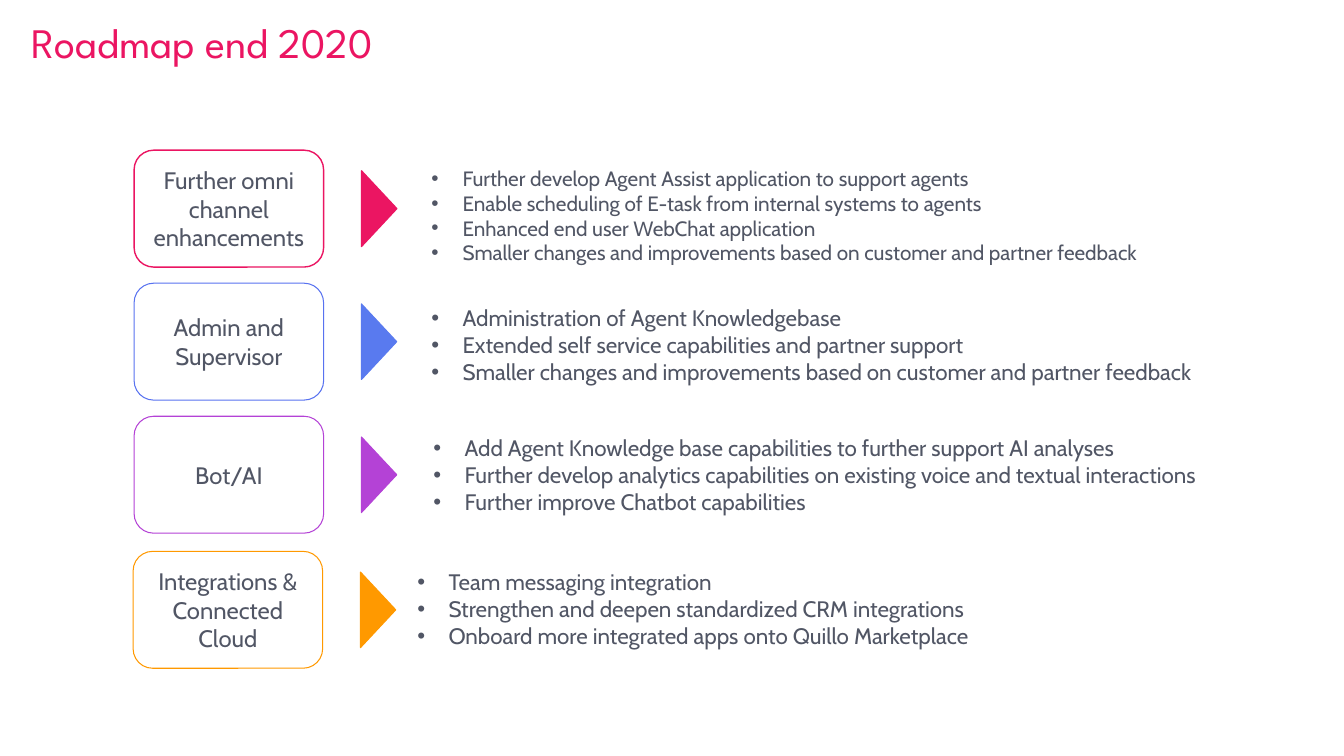
from lxml import etree
from pptx import Presentation
from pptx.dml.color import RGBColor
from pptx.enum.shapes import MSO_SHAPE
from pptx.enum.text import MSO_ANCHOR, PP_ALIGN
from pptx.oxml.ns import qn
from pptx.util import Inches, Pt

PINK, BLUE, PURPLE, ORANGE = "EB1562", "5872F0", "B442D6", "FF9900"
ARROW_BLUE, GREY, WHITE = "597AEF", "515665", "FFFFFF"
BOX_W, BOX_H = 1.88, 1.16
ARROW_W, ARROW_H = 0.75, 0.35
ARROW_DX = 2.43  # from the left of the box to the middle of the arrow
INDENT = 0.31

# Box place, colours, line width, label, then bullet offset, size and text
ROWS = [
    dict(left=1.33, top=1.49, color=PINK, arrow=PINK, width=1, fill=WHITE,
         label=["Further omni channel enhancements"],
         dx=2.85, dy=0.13, size=14.8, first_spacing=0.9,
         bullets=["Further develop Agent Assist application to support agents",
                  "Enable scheduling of E-task from internal systems to agents",
                  "Enhanced end user WebChat application",
                  "Smaller changes and improvements based on customer and partner feedback"]),
    dict(left=1.33, top=2.81, color=BLUE, arrow=ARROW_BLUE,
         label=["Admin and Supervisor"], dx=2.85, dy=0.16,
         bullets=["Administration of Agent Knowledgebase",
                  "Extended self service capabilities and partner support",
                  "Smaller changes and improvements based on customer and partner feedback"]),
    dict(left=1.33, top=4.13, color=PURPLE, arrow=PURPLE,
         label=["Bot/AI"], dx=2.87, dy=0.13,
         bullets=["Add Agent Knowledge base capabilities to further support AI analyses",
                  "Further develop analytics capabilities on existing voice and textual interactions",
                  "Further improve Chatbot capabilities"]),
    dict(left=1.32, top=5.47, color=ORANGE, arrow=ORANGE,
         label=["Integrations &", "Connected Cloud"], dx=2.72, dy=0.12,
         bullets=["Team messaging integration",
                  "Strengthen and deepen standardized CRM integrations",
                  "Onboard more integrated apps onto Quillo Marketplace"]),
]


def rgb(value):
    return RGBColor.from_string(value)


def add_bullet(p):
    pPr = p._p.get_or_add_pPr()
    pPr.set("marL", str(Inches(INDENT)))
    pPr.set("indent", str(-Inches(INDENT)))
    etree.SubElement(pPr, qn("a:buFont")).set("typeface", "Arial")
    etree.SubElement(pPr, qn("a:buChar")).set("char", "•")


def write(tf, lines, size=16, font="Cabin", color=GREY, align=PP_ALIGN.LEFT,
          anchor=MSO_ANCHOR.TOP, bullet=False, first_spacing=None):
    tf.word_wrap = True
    tf.vertical_anchor = anchor
    for i, line in enumerate(lines):
        p = tf.add_paragraph() if i else tf.paragraphs[0]
        if bullet:
            add_bullet(p)
        p.alignment = align
        if first_spacing and i == 0:
            p.line_spacing = first_spacing
        r = p.add_run()
        r.text = line
        r.font.size = Pt(size)
        r.font.name = font
        r.font.color.rgb = rgb(color)


def add_shape(s, kind, left, top, width, height, line, line_width, fill=None):
    sp = s.shapes.add_shape(kind, Inches(left), Inches(top), Inches(width), Inches(height))
    sp.shadow.inherit = False
    if fill:
        sp.fill.solid()
        sp.fill.fore_color.rgb = rgb(fill)
    else:
        sp.fill.background()
    sp.line.color.rgb = rgb(line)
    sp.line.width = Pt(line_width)
    return sp


def add_title(s, left, top, width, height):
    sp = s.shapes.title
    sp.left, sp.top, sp.width, sp.height = map(Inches, (left, top, width, height))
    sp.text_frame.margin_left = 0
    write(sp.text_frame, ["Roadmap end 2020"], size=30, font="League Spartan",
          color=PINK, first_spacing=0.9)


def add_row(s, left, top, color, arrow, label, bullets, dx, dy,
            width=0.75, fill=None, size=16, first_spacing=None):
    # Label box
    box = add_shape(s, MSO_SHAPE.ROUNDED_RECTANGLE, left, top, BOX_W, BOX_H,
                    color, width, fill)
    write(box.text_frame, label, size=17, align=PP_ALIGN.CENTER, anchor=MSO_ANCHOR.MIDDLE)

    # Arrow, centred on the height of the box
    tri = add_shape(s, MSO_SHAPE.ISOSCELES_TRIANGLE, left + ARROW_DX - ARROW_W / 2,
                    top + (BOX_H - ARROW_H) / 2, ARROW_W, ARROW_H, arrow, width, arrow)
    tri.rotation = 90

    # Bullet list
    tb = s.shapes.add_textbox(Inches(left + dx), Inches(top + dy), Inches(7.98), Inches(1))
    write(tb.text_frame, bullets, size=size, bullet=True, first_spacing=first_spacing)


def main():
    prs = Presentation()
    prs.slide_width, prs.slide_height = Inches(13.33), Inches(7.5)
    s = prs.slides.add_slide(prs.slide_layouts[5])
    add_title(s, 0.31, 0.17, 12.7, 0.72)
    for row in ROWS:
        add_row(s, **row)
    prs.save("out.pptx")


if __name__ == "__main__":
    main()
